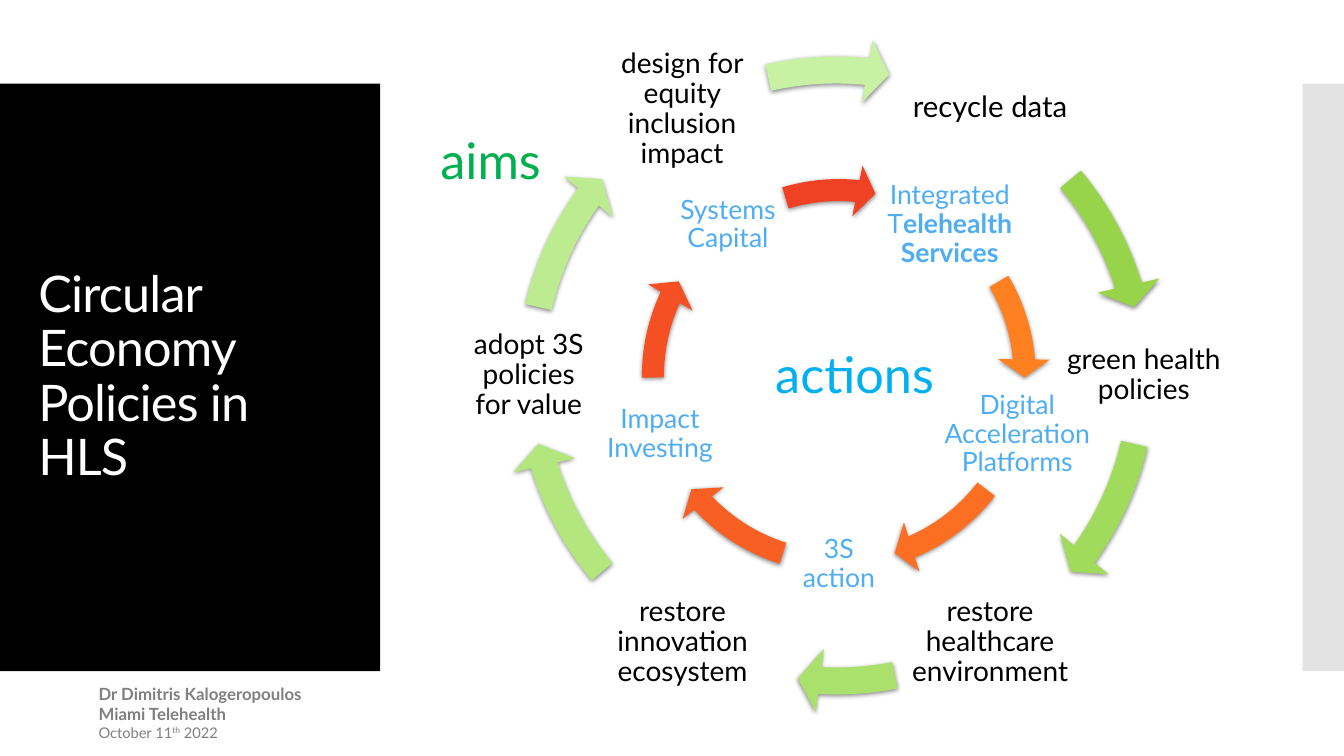
from lxml import etree
from pptx import Presentation
from pptx.dml.color import RGBColor as RGB
from pptx.enum.shapes import MSO_SHAPE as SHAPE
from pptx.enum.text import MSO_ANCHOR as ANCHOR, MSO_AUTO_SIZE as FIT, PP_ALIGN as ALIGN
from pptx.oxml.ns import qn
from pptx.util import Pt

PX = 9144
FONT = "Lato"
BLACK = RGB(0x00, 0x00, 0x00)
WHITE = RGB(0xFF, 0xFF, 0xFF)
SIDE_GRAY = RGB(0xC8, 0xC8, 0xC8)
CREDIT_GRAY = RGB(0x80, 0x80, 0x80)
SKY = RGB(0x4F, 0xAD, 0xF3)
AIMS_GREEN = RGB(0x00, 0xB0, 0x50)
ACTIONS_BLUE = RGB(0x00, 0xB0, 0xF0)
GREENS = [RGB(0x98, 0xD4, 0x4A), RGB(0xA0, 0xDB, 0x5B), RGB(0xAA, 0xE1, 0x6C),
          RGB(0xB3, 0xE7, 0x7E), RGB(0xBD, 0xEC, 0x90), RGB(0xC8, 0xF1, 0xA3)]
ORANGES = [RGB(0xFF, 0x80, 0x21), RGB(0xFC, 0x6F, 0x22), RGB(0xF8, 0x5F, 0x22),
           RGB(0xF5, 0x50, 0x23), RGB(0xF1, 0x41, 0x24)]

LABEL = {"margin_left": 3 * PX, "margin_right": 3 * PX, "margin_top": 3 * PX,
         "margin_bottom": 3 * PX, "vertical_anchor": ANCHOR.MIDDLE, "word_wrap": True}
HEADING = {"word_wrap": False, "auto_size": FIT.SHAPE_TO_FIT_TEXT}
CREDIT = {"word_wrap": True, "auto_size": FIT.SHAPE_TO_FIT_TEXT}
TITLE = {"word_wrap": True, "auto_size": FIT.NONE, "vertical_anchor": ANCHOR.MIDDLE}


def add_preset(shapes, kind, box, color):
    shape = shapes.add_shape(kind, *[n * PX for n in box])
    shape.shadow.inherit = False
    shape.fill.solid()
    shape.fill.fore_color.rgb = color
    shape.line.fill.background()
    return shape


def write(frame, frame_format, paragraph_format, runs, size, color):
    for key, value in frame_format.items():
        setattr(frame, key, value)
    paragraph = frame.paragraphs[0]
    if paragraph.runs:
        paragraph = frame.add_paragraph()
    for key, value in paragraph_format.items():
        setattr(paragraph, key, value)
    for text, bold, extra in runs:
        run = paragraph.add_run()
        run.text = text
        for key, value in {"name": FONT, "size": Pt(size), "bold": bold}.items():
            setattr(run.font, key, value)
        run.font.color.rgb = color
        for key, value in extra.items():
            run._r.get_or_add_rPr().set(key, value)


deck = Presentation()
deck.slide_width, deck.slide_height = 1333 * PX, 750 * PX
slide = deck.slides.add_slide(deck.slide_layouts[5])
shapes = slide.shapes

add_preset(shapes, SHAPE.RECTANGLE, (0, 83, 377, 583), BLACK)
side_bar = add_preset(shapes, SHAPE.RECTANGLE, (1292, 83, 41, 583), SIDE_GRAY)
side_color = side_bar.element.spPr.find(qn("a:solidFill"))[0]
etree.SubElement(side_color, qn("a:alpha"), val="50000")

title = shapes.title
title.element.getparent().append(title.element)
title.left, title.top, title.width, title.height = [n * PX for n in (28, 123, 322, 503)]
write(title.text_frame, TITLE, {"alignment": ALIGN.LEFT, "line_spacing": 0.9},
      [("Circular Economy Policies in HLS", False, {"spc": "-60"})], 36, WHITE)

rings = [
    ((495, 38, 669, 669), (0.04, 2.502, 0.047), 20, BLACK, GREENS, [
        ("recycle data", "", (882, 40, 200, 137), 205.735, 192.029),
        ("green health policies", "", (1037, 304, 195, 137), 21.469, 7.763),
        ("restore healthcare environment", "", (888, 569, 188, 137), 55.849, 47.378),
        ("restore innovation ecosystem", "", (563, 569, 228, 137), 97.735, 84.029),
        ("adopt 3S policies for value", "", (456, 304, 137, 137), 129.469, 115.763),
        ("design for equity inclusion impact", "", (592, 40, 169, 137), 165.471, 154.268),
    ]),
    ((622, 163, 420, 420), (0.052, 3.358, 0.061), 19, SKY, ORANGES, [
        ("Integrated T", "elehealth Services", (869, 167, 146, 112), 212.935, 197.66),
        ("Digital Acceleration Platforms", "", (931, 375, 156, 112), 40.15, 22.531),
        ("3S action", "", (776, 504, 112, 112), 82.11, 64.492),
        ("Impact Investing", "", (587, 375, 135, 112), 122.982, 107.706),
        ("Systems Capital", "", (666, 167, 112, 112), 165.442, 151.982),
    ]),
]
for ring_box, (band, tip, head), size, text_color, arrow_colors, steps in rings:
    ring = shapes.add_group_shape().shapes
    for (text, bold_text, box, end, start), arrow_color in zip(steps, arrow_colors):
        label = ring.add_textbox(*[n * PX for n in box])
        runs = [(part, bold, {}) for part, bold in ((text, False), (bold_text, True)) if part]
        is_recycle = text == "recycle data"
        write(label.text_frame, LABEL,
              {"alignment": ALIGN.CENTER, "line_spacing": 0.8 if is_recycle else 0.9},
              runs, 21 if is_recycle else size, text_color)
        arrow = add_preset(ring, SHAPE.CIRCULAR_ARROW, ring_box, arrow_color)
        for index, value in enumerate((band, tip, end, start, head)):
            arrow.adjustments[index] = value
        effects = arrow.element.spPr.find(qn("a:effectLst"))
        shadow = etree.SubElement(effects, qn("a:outerShdw"), blurRad="44450", dist="13970",
                                  dir="5400000", rotWithShape="0")
        shade = etree.SubElement(shadow, qn("a:srgbClr"), val="000000")
        etree.SubElement(shade, qn("a:alpha"), val="45000")

for text, box, color in (("aims", (427, 123, 137, 71), AIMS_GREEN),
                         ("actions", (759, 335, 198, 71), ACTIONS_BLUE)):
    heading = shapes.add_textbox(*[n * PX for n in box])
    write(heading.text_frame, HEADING, {}, [(text, False, {})], 36, color)

credit = shapes.add_textbox(*[n * PX for n in (88, 673, 384, 88)])
for runs, size in (
    ([("Dr Dimitris Kalogeropoulos", True, {})], 12),
    ([("Miami Telehealth", True, {})], 12),
    ([("October 11", False, {}), ("th", False, {"baseline": "30000"}), (" 2022", False, {})], 10.5),
):
    write(credit.text_frame, CREDIT, {}, runs, size, CREDIT_GRAY)

deck.save("out.pptx")
